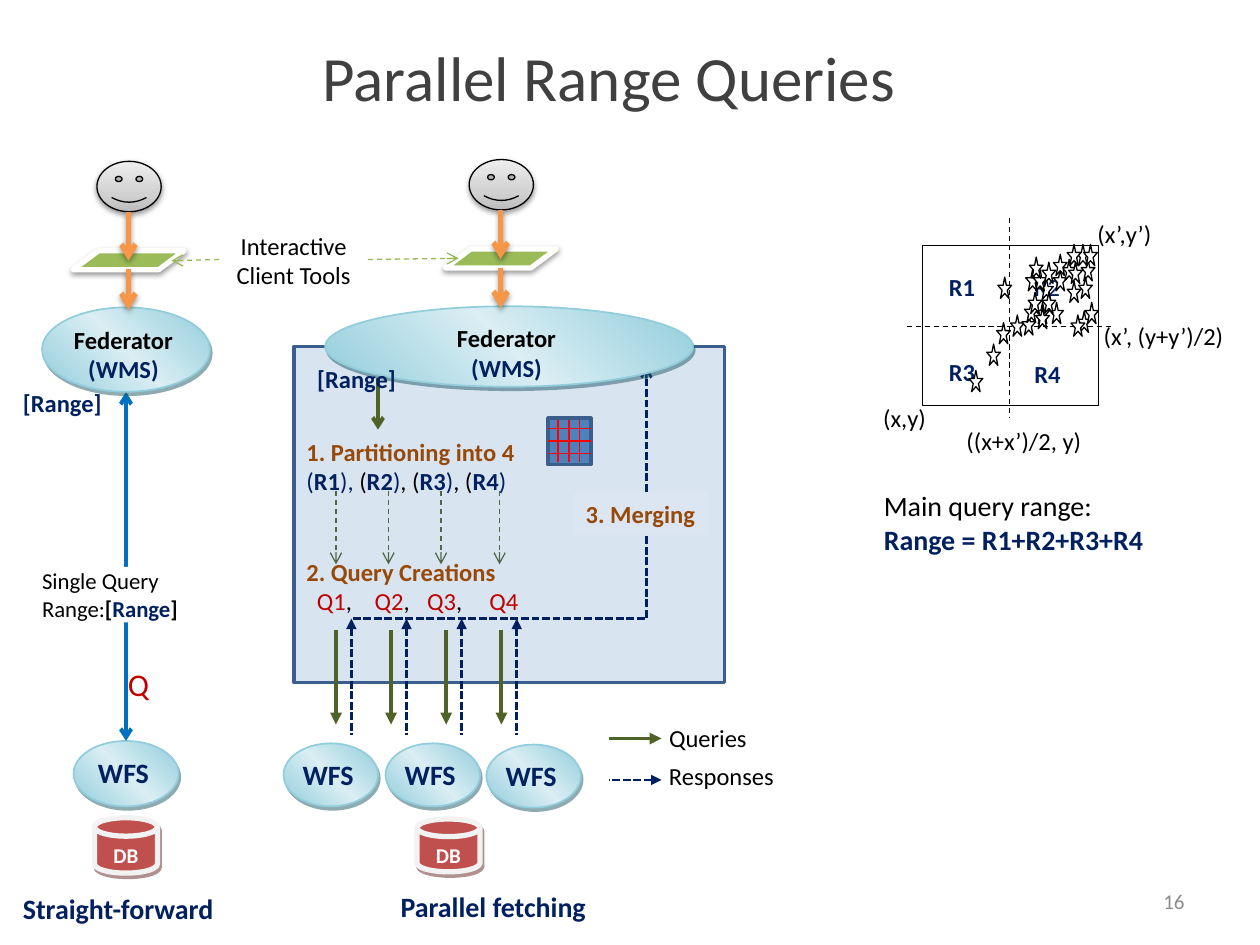
"""Build the Parallel Range Queries slide."""
from dataclasses import dataclass

from pptx import Presentation
from pptx.dml.color import RGBColor
from pptx.enum.dml import MSO_LINE as Dash
from pptx.enum.shapes import MSO_CONNECTOR as Wire, MSO_SHAPE as Form
from pptx.enum.text import MSO_ANCHOR as Anchor, PP_ALIGN as Align
from pptx.oxml import parse_xml
from pptx.oxml.ns import nsdecls, qn
from pptx.util import Pt


@dataclass(frozen=True)
class Theme:
    font: str = "Calibri"
    black: str = "000000"
    white: str = "FFFFFF"
    navy: str = "002060"
    brown: str = "984807"
    red: str = "C00000"
    grid: str = "FF0000"
    green: str = "4F6228"
    lime: str = "9BBB59"
    lime_line: str = "98B955"
    orange: str = "F79646"
    blue: str = "4F81BD"
    blue_line: str = "3A5F8C"
    link: str = "0070C0"
    merge: str = "DCE6F2"
    teal: str = "92CDDC"
    disk: str = "C0504D"
    disk_line: str = "F2F2F2"
    title: str = "404040"
    number: str = "8C8C8C"
    teal_fade: tuple = (45, (0, "92CDDC"), (50, "DAEEF3"), (100, "92CDDC"))
    gray_fade: tuple = (90, (0, "BDBDBD"), (35, "D1D1D1"), (100, "EEEEEE"))
    teal_shadow: tuple = ("205867", 50, 0, 2.2, 63)
    disk_shadow: tuple = ("622423", 50, 0, 2.2, 63)
    soft_shadow: tuple = ("000000", 38, 3.1, 1.6, 90)
    title_size: int = 36
    big: int = 18
    head: int = 16
    body: int = 14
    note: int = 13
    small: int = 12


look = Theme()
deck = Presentation()
deck.slide_width, deck.slide_height = Pt(720), Pt(540)
page = deck.slides.add_slide(deck.slide_layouts[5])
shadows = []


def draw(form, at, lines=(), size=look.body, align=Align.LEFT, inset=(7.2, 3.6, 7.2, 3.6), fill=None,
         line=None, width=0.75, shadow=None, anchor=Anchor.TOP, owner=page.shapes):
    spot = [Pt(value) for value in at]
    box = owner.add_shape(form, *spot) if form else owner.add_textbox(*spot)
    if form:
        box.shadow.inherit = False
    if isinstance(fill, tuple):
        box.fill.gradient()
        box.fill.gradient_angle = fill[0]
        stops = box._element.spPr.find(".//" + qn("a:gsLst"))
        for stop in list(stops):
            stops.remove(stop)
        for place, color in fill[1:]:
            stops.append(parse_xml(f'<a:gs {nsdecls("a")} pos="{place * 1000}"><a:srgbClr val="{color}"/></a:gs>'))
    elif fill:
        box.fill.solid()
        box.fill.fore_color.rgb = RGBColor.from_string(fill)
    if line:
        box.line.color.rgb = RGBColor.from_string(line)
        box.line.width = Pt(width)
    else:
        box.line.fill.background()
    if shadow:
        shadows.append((box, shadow))
    frame = box.text_frame
    frame.word_wrap, frame.vertical_anchor = True, anchor
    frame.margin_left, frame.margin_top, frame.margin_right, frame.margin_bottom = [Pt(value) for value in inset]
    for index, runs in enumerate(lines):
        para = frame.add_paragraph() if index else frame.paragraphs[0]
        para.alignment = align
        for text, color, bold in runs:
            span = para.add_run()
            span.text = text
            span.font.name, span.font.size, span.font.bold = look.font, Pt(size), bold
            span.font.color.rgb = RGBColor.from_string(color)
    return box


def link(start, end, color, width, dash=None, head=None, tail=None, shadow=None, wire=Wire.STRAIGHT,
         owner=page.shapes):
    arrow = owner.add_connector(wire, *[Pt(value) for value in (*start, *end)])
    arrow.line.color.rgb = RGBColor.from_string(color)
    arrow.line.width = Pt(width)
    if dash:
        arrow.line.dash_style = dash
    for tag, kind in (("headEnd", head), ("tailEnd", tail)):
        if kind:
            arrow.line._ln.append(parse_xml(f'<a:{tag} {nsdecls("a")} type="{kind}"/>'))
    arrow._element.spPr.append(parse_xml(f'<a:effectLst {nsdecls("a")}/>'))
    if shadow:
        shadows.append((arrow, shadow))
    return arrow


title = page.shapes.title
title.left, title.top, title.width, title.height = Pt(12), Pt(9.4), Pt(672), Pt(68.4)
title.text_frame.vertical_anchor = Anchor.MIDDLE
para = title.text_frame.paragraphs[0]
para.alignment = Align.CENTER
span = para.add_run()
span.text = "Parallel Range Queries"
span.font.name, span.font.size = look.font, Pt(look.title_size)
span.font.color.rgb = RGBColor.from_string(look.title)

draw(None, (516, 500.4, 168, 28.8), [[("16", look.number, False)]], look.small, Align.RIGHT, anchor=Anchor.MIDDLE)
draw(None, (498, 275.8, 186, 46), [[("Main query range:", look.black, False)],
                                   [("Range = R1+R2+R3+R4", look.navy, True)]], look.head)

node = dict(align=Align.CENTER, inset=(2.9, 2.9, 5.8, 2.9), fill=look.teal_fade, line=look.teal, width=1,
            shadow=look.teal_shadow)
store = dict(size=look.small, align=Align.CENTER, inset=(3.6,) * 4, fill=look.disk, line=look.disk_line, width=3,
             shadow=look.disk_shadow)
wfs = [[("WFS", look.navy, True)]]
database = [[("DB", look.white, True)]]
federator = [[("Federator", look.black, True)], [("(WMS)", look.navy, True)]]
query_range = [[("[Range]", look.navy, True)]]

single = page.shapes.add_group_shape().shapes
draw(Form.OVAL, (42, 423.4, 60, 37.4), wfs, look.head, owner=single, **node)
link((72, 224), (72, 423.4), look.link, 2.25, head="arrow", tail="arrow", owner=single)
draw(Form.RECTANGLE, (24, 324, 96, 31.7),
     [[("Single Query Range:", look.black, False), ("[", look.black, True), ("Range", look.navy, True),
       ("]", look.black, True)]], look.note, inset=(0,) * 4, fill=look.white, owner=single)
draw(Form.FLOWCHART_MAGNETIC_DISK, (54, 467.3, 36, 31.7), database, owner=single, **store)
draw(None, (66, 376.6, 24, 28.8), [[("Q", look.red, False)]], look.big, owner=single)
draw(Form.OVAL, (24, 175.7, 96, 48.2), federator, owner=single, **node)
draw(None, (6, 506.2, 138, 28), [[("Straight-forward", look.navy, True)]], look.head, owner=single)
draw(None, (6, 218.2, 84, 24.5), query_range, owner=single)

for x in (192, 222, 252, 285.5):
    link((x, 280.5), (x, 322.5), look.green, 0.75, Dash.DASH, tail="arrow")
panel = draw(Form.RECTANGLE, (168, 198, 246, 192), fill=look.blue, line=look.blue_line, width=2)
panel._element.spPr.find(qn("a:solidFill"))[0].append(parse_xml(f'<a:alpha {nsdecls("a")} val="21000"/>'))

parts = [("(", look.navy, False), ("R1", look.navy, True), ("),", look.navy, False), (" (", look.black, False)]
for name in ("R2", "R3"):
    parts += [(name, look.navy, True), (")", look.navy, False), (", (", look.black, False)]
parts += [("R4", look.navy, True), (")", look.navy, False)]
draw(None, (168, 246.2, 162, 41), [[("1. Partitioning into 4", look.brown, True)], parts])

queries = []
for number in range(1, 5):
    queries += [("\t", look.black, False), (f"Q{number}", look.red, False)]
    if number < 4:
        queries.append((",", look.black, False))
creation = draw(None, (168, 314.6, 150, 41), [[("2. Query Creations", look.brown, True)], queries])
stops = "".join(f'<a:tab pos="{Pt(x)}" algn="l"/>' for x in (6, 39, 69, 104.5))
creation.text_frame.paragraphs[1]._p.get_or_add_pPr().append(
    parse_xml(f'<a:tabLst {nsdecls("a")}>{stops}</a:tabLst>'))

for x, y in ((220.3, 424.8), (162, 424.8), (277.9, 425.5)):
    draw(Form.OVAL, (x, y, 54, 36), wfs, look.head, **node)
for step in range(4):
    x = 192 + 31.5 * step
    link((x, 360), (x, 414), look.green, 2.25, tail="triangle")
    link((x + 8.8, 353.5), (x + 8.8, 419.8), look.navy, 1.5, Dash.SQUARE_DOT, head="triangle")
link((216, 216), (216, 245.5), look.green, 2.25, tail="arrow")
draw(Form.FLOWCHART_MAGNETIC_DISK, (238.3, 468, 36, 30.2), database, **store)
merging = link((201.6, 353.5), (369.4, 209.5), look.navy, 1.5, Dash.SQUARE_DOT, tail="arrow", wire=Wire.ELBOW)
bend = merging._element.spPr.find(qn("a:prstGeom")).find(qn("a:avLst"))
bend.append(parse_xml(f'<a:gd {nsdecls("a")} name="adj1" fmla="val 100000"/>'))
draw(None, (221.8, 504.7, 138, 26.6), [[("Parallel fetching", look.navy, True)]], look.head)
draw(Form.OVAL, (185.8, 175, 210.2, 46), federator, **node)
draw(None, (174.2, 204.5, 72, 24.5), query_range)
draw(Form.RECTANGLE, (327.6, 281.5, 77.8, 24.5), [[("3. Merging", look.brown, True)]], fill=look.merge)

link((347.8, 422), (378, 422), look.green, 2.25, tail="triangle")
link((378, 445.7), (347.8, 445.7), look.navy, 1.5, Dash.SQUARE_DOT, head="triangle")
for label, y, width in (("Queries", 413.3, 48), ("Responses", 435, 66)):
    draw(Form.RECTANGLE, (382.3, y, width, 17.3), [[(label, look.black, False)]], inset=(0,) * 4, fill=look.white)

draw(Form.RECTANGLE, (527, 140.4, 100.8, 91.4), fill=look.white, line=look.black)
link((576.7, 124.6), (576.7, 238.3), look.black, 0.75, Dash.DASH)
link((518.4, 186.5), (636.5, 186.5), look.black, 0.75, Dash.DASH)
for label, x, y, width, bold in (("R3", 535.7, 200.2, 31.7, True), ("R2", 584.6, 152, 31.7, False),
                                 ("R1", 535.7, 152, 40.3, True), ("R4", 584.6, 201.6, 31.7, True)):
    draw(Form.RECTANGLE, (x, y, width, 21.6), [[(label, look.navy, bold)]], inset=(6.5, 3.6, 6.5, 3.6),
         fill=look.white)
for label, x, y, width in (("(x’,y’)", 620.6, 121.7, 45.4), ("(x,y)", 498.2, 226.8, 42.5),
                           ("((x+x’)/2, y)", 545.8, 239.8, 84.2), ("(x’, (y+y’)/2)", 624.2, 180, 84.2)):
    draw(None, (x, y, width, 25.2), [[(label, look.black, False)]], inset=(6.5, 3.6, 6.5, 3.6))

draw(None, (125.3, 128.2, 85, 41), [[("Interactive", look.black, False)], [("Client Tools", look.black, False)]],
     align=Align.CENTER)
for dx, dy in ((0, 0), (212.7, -1)):
    draw(Form.SMILEY_FACE, (55.4 + dx, 92.2 + dy, 36.7, 28.8), fill=look.gray_fade, line=look.black,
         shadow=look.soft_shadow)
    tool = draw(Form.PARALLELOGRAM, (41.8 + dx, 143.3 + dy, 63.4, 10.8), fill=look.lime, line=look.white, width=3,
                shadow=look.soft_shadow)
    tool.adjustments[0] = 1.34
    for top, bottom in ((121, 149), (154, 177)):
        link((73.4 + dx, top + dy), (73.4 + dx, bottom + dy), look.orange, 3, tail="arrow", shadow=look.soft_shadow)
link((210.2, 148.3), (262.1, 147.6), look.lime_line, 0.75, Dash.DASH, tail="arrow")
link((125.3, 148.3), (97.9, 149), look.lime_line, 0.75, Dash.DASH, tail="arrow")

points = page.shapes.add_group_shape().shapes
for x, y in ((563.8, 196.6), (570.2, 158.4), (609.8, 160.6), (601.9, 154.1), (569.5, 184.3), (615.6, 177.8),
             (617.8, 148.3), (607, 148.3), (586.1, 154.1), (553.7, 211.7), (614.9, 139.7), (619.2, 139.7),
             (591.8, 172.8), (591.8, 175.7), (609.8, 139.7), (601.9, 145.4), (610.6, 149.8), (616.3, 158.4),
             (594, 159.1), (590.4, 154.1), (595.4, 149.8), (612, 180), (619.9, 172.8), (577.4, 180),
             (583.9, 179.3), (585.4, 172.1), (587.5, 167), (599.8, 172.8), (595.4, 167), (588.2, 146.9)):
    draw(Form.STAR_5_POINT, (x, y, 7.9, 12.2), fill=look.white, line=look.black, owner=points)

draw(Form.RECTANGLE, (313.2, 239, 24.5, 26.6), fill=look.blue, line=look.blue_line, width=2)
for step in range(3):
    y, x = 244.8 + 7.2 * step, 319 + 6.1 * step
    link((313.2, y), (337.7, y), look.grid, 1)
    link((x, 239.8), (x, 264.2), look.grid, 1)

for shape, (color, opacity, blur, distance, angle) in shadows:
    shape._element.spPr.find(qn("a:effectLst")).append(parse_xml(
        f'<a:outerShdw {nsdecls("a")} blurRad="{Pt(blur)}" dist="{Pt(distance)}" dir="{angle * 60000}" '
        f'rotWithShape="0"><a:srgbClr val="{color}"><a:alpha val="{opacity * 1000}"/></a:srgbClr></a:outerShdw>'))

deck.save("out.pptx")
